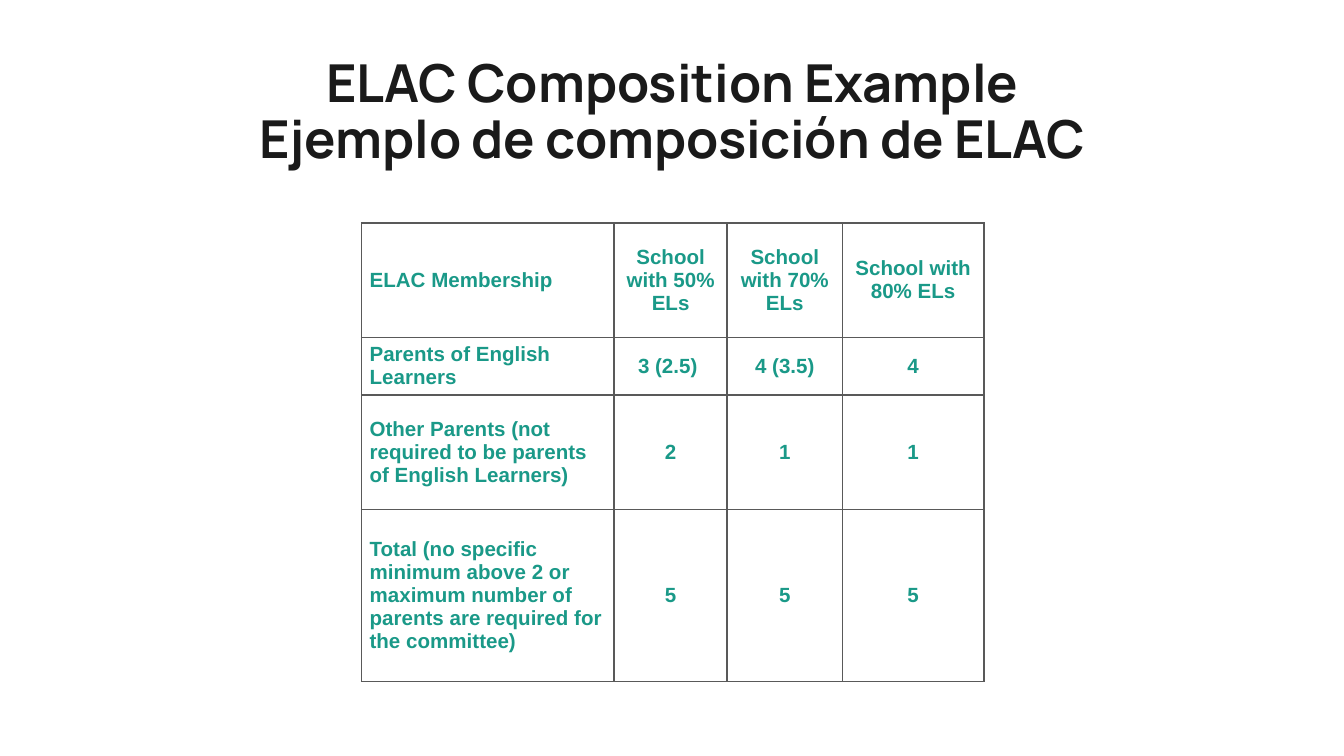
from dataclasses import dataclass

from lxml.etree import SubElement
from pptx import Presentation
from pptx.dml.color import RGBColor
from pptx.enum.text import MSO_ANCHOR, PP_ALIGN
from pptx.oxml.ns import qn
from pptx.util import Inches, Pt

COLORS = {"title": "1A1A1A", "text": "1A9988", "border": "595959", "cell": "FFFFFF"}
COL_WIDTHS = [1.88, 0.84, 0.86, 1.05]


@dataclass
class MemberRow:
    height: float
    label: str
    values: list[str]


ROWS = [
    MemberRow(0.85, "ELAC Membership", [f"School with {n}% ELs" for n in (50, 70, 80)]),
    MemberRow(0.43, "Parents of English Learners", ["3 (2.5) ", "4 (3.5)", "4"]),
    MemberRow(0.85, "Other Parents (not required to be parents of English Learners)",
              ["2", "1", "1"]),
    MemberRow(1.28, "Total (no specific minimum above 2 or maximum number of parents "
              "are required for the committee)", ["5", "5", "5"]),
]


def set_font(p, name: str, size: float, color: str) -> None:
    font = p.font
    font.name, font.size, font.bold = name, Pt(size), True
    font.color.rgb = RGBColor.from_string(COLORS[color])


def add_title(s, text: str) -> None:
    sp = s.shapes.add_textbox(Inches(0.69), Inches(0.3), Inches(8.62), Inches(1.09))
    tf = sp.text_frame
    tf.word_wrap = True
    tf.vertical_anchor = MSO_ANCHOR.MIDDLE
    tf.margin_left = tf.margin_right = Inches(0.07)
    tf.margin_top = tf.margin_bottom = Inches(0.04)
    p = tf.paragraphs[0]
    p.text = text
    p.alignment = PP_ALIGN.CENTER
    p.line_spacing = 0.9
    set_font(p, "Manrope", 28, "title")


def add_borders(cell) -> None:
    tc_pr = cell._tc.get_or_add_tcPr()
    for side in ("lnL", "lnR", "lnT", "lnB"):
        ln = SubElement(tc_pr, qn(f"a:{side}"), w=str(Pt(1)))
        fill = SubElement(ln, qn("a:solidFill"))
        SubElement(fill, qn("a:srgbClr"), val=COLORS["border"])


def fill_cell(cell, text: str, align: PP_ALIGN) -> None:
    add_borders(cell)
    cell.fill.solid()
    cell.fill.fore_color.rgb = RGBColor.from_string(COLORS["cell"])
    cell.vertical_anchor = MSO_ANCHOR.MIDDLE
    cell.margin_left = cell.margin_right = Inches(0.06)
    cell.margin_top = cell.margin_bottom = 0
    p = cell.text_frame.paragraphs[0]
    p.text = text
    p.alignment = align
    set_font(p, "Arial", 11, "text")


def add_members(s, rows: list[MemberRow]) -> None:
    table = s.shapes.add_table(
        len(rows), len(COL_WIDTHS), Inches(2.69), Inches(1.66),
        Inches(sum(COL_WIDTHS)), Inches(sum(row.height for row in rows))).table
    for column, width in zip(table.columns, COL_WIDTHS):
        column.width = Inches(width)
    for i, row in enumerate(rows):
        table.rows[i].height = Inches(row.height)
        for j, text in enumerate([row.label, *row.values]):
            fill_cell(table.cell(i, j), text, PP_ALIGN.CENTER if j else PP_ALIGN.LEFT)


def main() -> None:
    prs = Presentation()
    prs.slide_width = Inches(10)
    prs.slide_height = prs.slide_width * 9 // 16
    s = prs.slides.add_slide(prs.slide_layouts[6])
    add_title(s, "ELAC Composition Example\vEjemplo de composición de ELAC")
    add_members(s, ROWS)
    prs.save("out.pptx")


if __name__ == "__main__":
    main()
